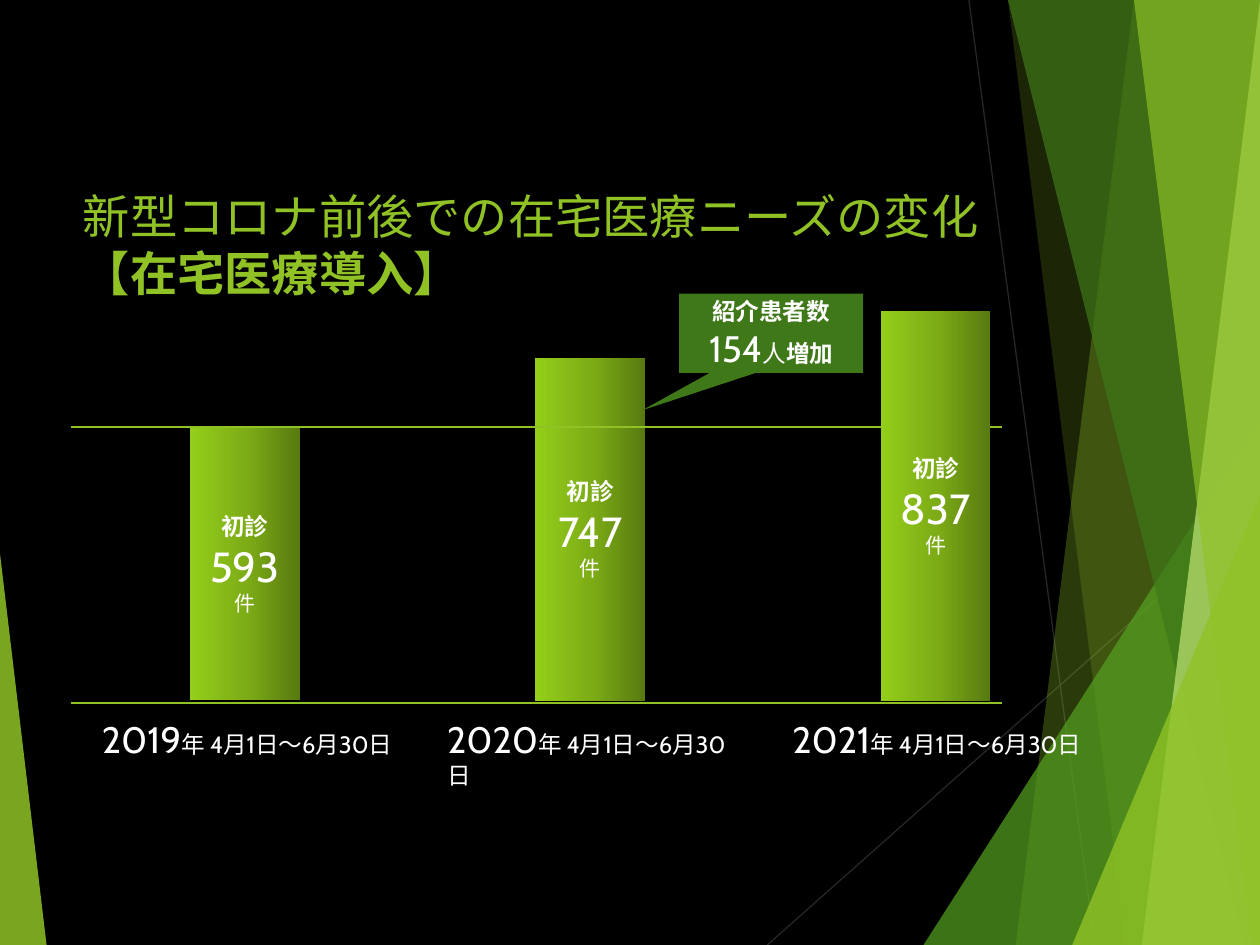
from copy import deepcopy

from lxml.etree import SubElement
from pptx import Presentation
from pptx.dml.color import RGBColor
from pptx.enum.shapes import MSO_CONNECTOR, MSO_SHAPE
from pptx.enum.text import MSO_ANCHOR, PP_ALIGN
from pptx.oxml.ns import qn
from pptx.util import Inches, Pt

COLORS = {
    "black": "000000", "white": "FFFFFF", "gray": "262626",
    "lime": "90C226", "green": "54A021", "forest": "3F7819", "pale": "C0E474",
    "bar_dark": "587A10", "bar_mid": "7DAD16", "bar_light": "94CE1A",
}
FONT = "Cabin"

# Content: year, first visits, bar height in inches
BARS = [("2019", "593", 2.17), ("2020", "747", 2.72), ("2021", "837", 3.09)]
PERIOD = "年 4月1日～6月30日"
TITLE = ("新型コロナ前後での在宅医療ニーズの変化", "【在宅医療導入】")

# Text formats
SMALL = {"size": Pt(13.5)}
BOLD = {"size": Pt(13.5), "bold": True}
UNIT = {"size": Pt(12)}
YEAR = {"size": Pt(21)}
COUNT = {"size": Pt(24)}
HEAD = {"size": Pt(27)}

# Background: hairlines, then overlapping panels (points or triangle, colour, opacity)
HAIRLINES = [(7.69, 0, 8.69, 7.5), (10, 4.03, 6.09, 7.5)]
TOP, BOTTOM, RIGHT = -0.01, 7.5, 10
PANELS = [  # top-left x, bottom-left x
    (9.21, 7.53, "lime", 30),
    (7.88, 8.87, "lime", 20),
    ((7.33, 3.33, 2.67, 4.17), 1, "green", 72),
    (7.66, 9.68, "forest", 70),
    (9.78, 8.94, "pale", 70),
    (8.97, 9.88, "lime", 65),
    ((8.51, 3.93, 1.49, 3.57), 1, "lime", 80),
    ((0, 4.39, 0.37, 3.11), 0, "lime", 85),
]

# Chart layout
BAR_LEFT, BAR_STEP, BAR_WIDTH, BASE = 1.51, 2.74, 0.87, 5.56
LABEL_SHIFT, LABEL_TOP = 0.8, 5.64
RULE_LEFT, RULE_RIGHT = 0.56, 7.95

deck = Presentation()
deck.slide_width, deck.slide_height = Inches(10), Inches(7.5)
page = deck.slides.add_slide(deck.slide_layouts[6])
shapes = page.shapes


def color(name):
    return RGBColor.from_string(COLORS[name])


def add_line(x1, y1, x2, y2, name, width):
    line = shapes.add_connector(MSO_CONNECTOR.STRAIGHT, *map(Inches, (x1, y1, x2, y2)))
    line.line.color.rgb = color(name)
    line.line.width = Pt(width)
    SubElement(line._element.spPr, qn("a:effectLst"))


def add_preset(kind, *place):
    shape = shapes.add_shape(kind, *map(Inches, place))
    shape.shadow.inherit = False
    shape.line.fill.background()
    return shape


def fill_solid(shape, name, opacity=100):
    shape.fill.solid()
    shape.fill.fore_color.rgb = color(name)
    if opacity < 100:
        tone = shape._element.spPr.find(".//" + qn("a:srgbClr"))
        SubElement(tone, qn("a:alpha"), val=str(opacity * 1000))


def add_span(para, text, formats, name="white"):
    span = para.add_run()
    span.text = text
    span.font.name = FONT
    span.font.color.rgb = color(name)
    for key, value in formats.items():
        setattr(span.font, key, value)


def write(shape, paragraphs):
    frame = shape.text_frame
    frame.word_wrap = True
    frame.vertical_anchor = MSO_ANCHOR.MIDDLE
    for index, spans in enumerate(paragraphs):
        para = frame.add_paragraph() if index else frame.paragraphs[0]
        para.alignment = PP_ALIGN.CENTER
        for text, formats in spans:
            add_span(para, text, formats)


def add_text_box(*place):
    box = shapes.add_textbox(*map(Inches, place))
    box.text_frame.word_wrap = True
    return box.text_frame.paragraphs[0]


def add_bar(index):
    year, count, height = BARS[index]
    left = BAR_LEFT + index * BAR_STEP
    bar = add_preset(MSO_SHAPE.RECTANGLE, left, BASE - height, BAR_WIDTH, height)
    bar.fill.gradient()
    bar.fill.gradient_angle = 180
    stops = bar._element.spPr.find(".//" + qn("a:gsLst"))
    stops.append(deepcopy(stops[0]))
    names = ("bar_dark", "bar_mid", "bar_light")
    for stop, name, position in zip(bar.fill.gradient_stops, names, (0, 0.5, 1)):
        stop.color.rgb = color(name)
        stop.position = position
    write(bar, [[("初診", BOLD)], [(count, COUNT), ("件", UNIT)]])

    label = add_text_box(left - LABEL_SHIFT, LABEL_TOP, 2.51, 0.45)
    add_span(label, year, YEAR)
    add_span(label, PERIOD, SMALL)


# Background
page.background.fill.solid()
page.background.fill.fore_color.rgb = color("black")
for ends in HAIRLINES:
    add_line(*ends, "gray", 0.75)
for start, end, name, opacity in PANELS:
    if isinstance(start, tuple):
        panel = add_preset(MSO_SHAPE.ISOSCELES_TRIANGLE, *start)
        panel.adjustments[0] = end
    else:
        builder = shapes.build_freeform(start, TOP, scale=Inches(1))
        builder.add_line_segments([(RIGHT, TOP), (RIGHT, BOTTOM), (end, BOTTOM)])
        panel = builder.convert_to_shape()
        panel.shadow.inherit = False
        panel.line.fill.background()
    fill_solid(panel, name, opacity)

# Title
title = add_text_box(0.56, 1.44, 7.85, 1.08)
add_span(title, TITLE[0], HEAD, "lime")
title.add_line_break()
add_span(title, TITLE[1], {**HEAD, "bold": True}, "lime")

# Bars and rules: the 2019 level crosses the second bar and passes behind the third
add_line(RULE_LEFT, 5.58, RULE_RIGHT, 5.58, "lime", 1)
add_bar(0)
add_bar(1)
level = BASE - BARS[0][2]
add_line(RULE_LEFT, level, RULE_RIGHT, level, "lime", 1)
add_bar(2)

# Callout
callout = add_preset(MSO_SHAPE.RECTANGULAR_CALLOUT, 5.39, 2.33, 1.46, 0.63)
callout.adjustments[0], callout.adjustments[1] = -0.7, 0.97
fill_solid(callout, "forest")
write(callout, [[("紹介患者数", BOLD)],
                [("154", YEAR), ("人", SMALL), ("増加", BOLD)]])

deck.save("out.pptx")
